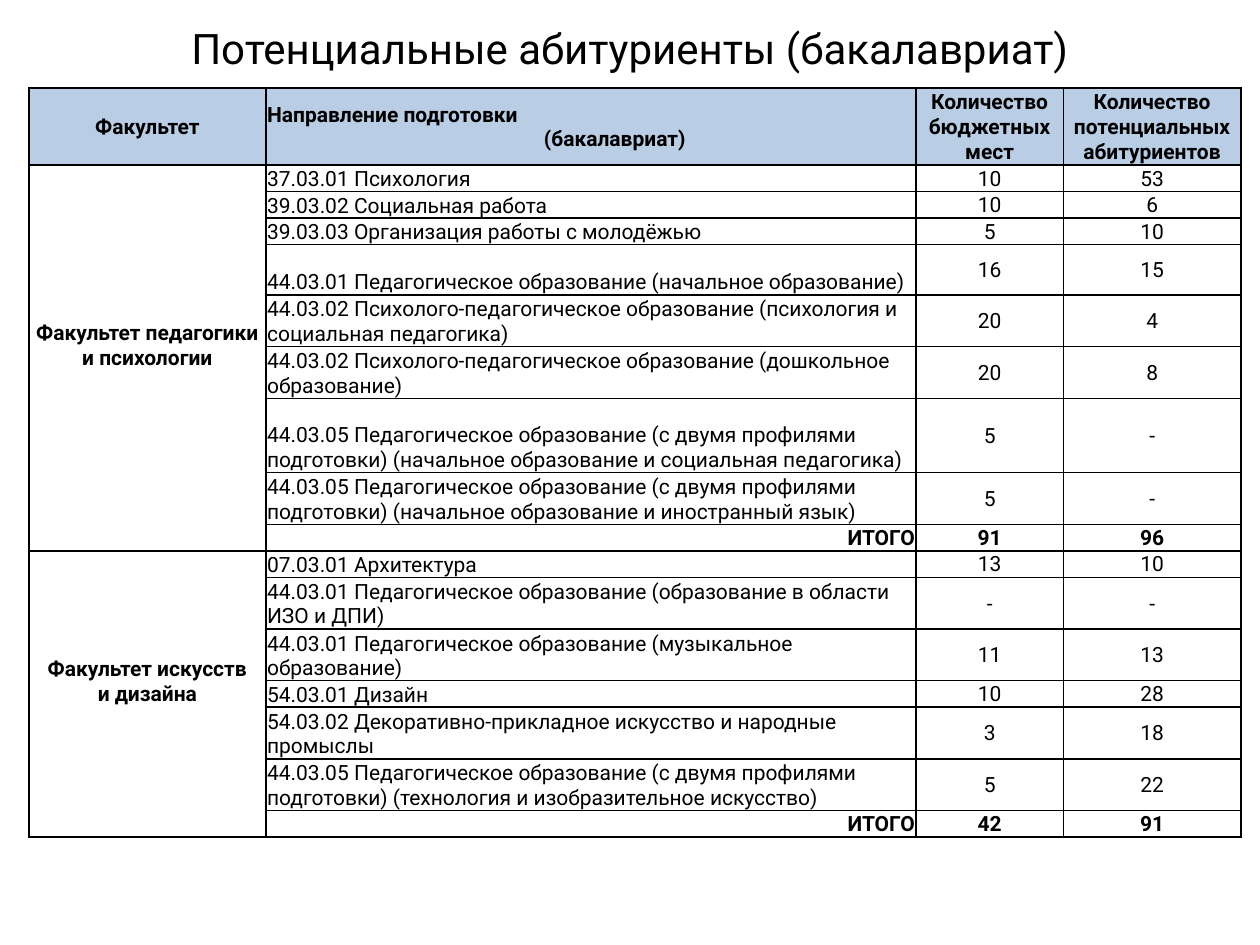
from lxml.etree import SubElement
from pptx import Presentation
from pptx.dml.color import RGBColor
from pptx.enum.text import MSO_ANCHOR, PP_ALIGN
from pptx.oxml.ns import qn
from pptx.util import Inches, Pt

THEME = {
    "font": "Roboto",
    "text": "000000",
    "header": "B9CDE5",
    "border": "000000",
    "title_size": 24,
    "table_size": 12,
    "border_width": 1,
}
TITLE = "Потенциальные абитуриенты (бакалавриат)"
HEADERS = [
    "Факультет",
    "Направление подготовки\n(бакалавриат)",
    "Количество бюджетных мест",
    "Количество потенциальных абитуриентов",
]
TOTAL = "ИТОГО"
FACULTIES = [
    ("Факультет педагогики\nи психологии", [
        ("37.03.01 Психология", "10", "53", 1),
        ("39.03.02 Социальная работа", "10", "6", 1),
        ("39.03.03 Организация работы с молодёжью", "5", "10", 1),
        ("44.03.01 Педагогическое образование (начальное образование)", "16", "15", 2),
        ("44.03.02 Психолого-педагогическое образование (психология и социальная педагогика)", "20", "4", 2),
        ("44.03.02 Психолого-педагогическое образование (дошкольное образование)", "20", "8", 2),
        ("44.03.05 Педагогическое образование (с двумя профилями подготовки) "
         "(начальное образование и социальная педагогика)", "5", "-", 3),
        ("44.03.05 Педагогическое образование (с двумя профилями подготовки) "
         "(начальное образование и иностранный язык)", "5", "-", 2),
        (TOTAL, "91", "96", 1),
    ]),
    ("Факультет искусств\nи дизайна", [
        ("07.03.01 Архитектура", "13", "10", 1),
        ("44.03.01 Педагогическое образование (образование в области ИЗО и ДПИ)", "-", "-", 2),
        ("44.03.01 Педагогическое образование (музыкальное образование)", "11", "13", 2),
        ("54.03.01 Дизайн", "10", "28", 1),
        ("54.03.02 Декоративно-прикладное искусство и народные промыслы", "3", "18", 2),
        ("44.03.05 Педагогическое образование (с двумя профилями подготовки) "
         "(технология и изобразительное искусство)", "5", "22", 2),
        (TOTAL, "42", "91", 1),
    ]),
]
COLUMN_WIDTHS = [1.88, 5.16, 1.17, 1.41]
LINE_HEIGHTS = {1: 0.2, 2: 0.4, 3: 0.59}
HEADER_LINES = 3
FACULTY_BOTTOM = 0.2
SECOND_LINE_INDENT = 0.38


def style_text(text_frame, size, bold=False, alignment=PP_ALIGN.CENTER):
    for paragraph in text_frame.paragraphs:
        paragraph.alignment = alignment
        for run in paragraph.runs:
            run.font.name = THEME["font"]
            run.font.size = Pt(size)
            run.font.bold = bold
            run.font.color.rgb = RGBColor.from_string(THEME["text"])


def style_cell(cell, fill=None):
    properties = cell._tc.get_or_add_tcPr()
    for side in ("a:lnL", "a:lnR", "a:lnT", "a:lnB"):
        line = SubElement(properties, qn(side), w=str(Pt(THEME["border_width"])))
        solid = SubElement(line, qn("a:solidFill"))
        SubElement(solid, qn("a:srgbClr"), val=THEME["border"])
    if fill:
        cell.fill.solid()
        cell.fill.fore_color.rgb = RGBColor.from_string(fill)
    else:
        cell.fill.background()
    cell.margin_left = cell.margin_right = cell.margin_top = Inches(0.01)
    cell.margin_bottom = 0


def write_cell(cell, text, bold=False, alignment=PP_ALIGN.CENTER, anchor=MSO_ANCHOR.MIDDLE):
    cell.text_frame.text = text
    cell.vertical_anchor = anchor
    style_text(cell.text_frame, THEME["table_size"], bold, alignment)


def add_title(slide):
    title = slide.shapes.add_textbox(0, 0, Inches(10), Inches(0.76))
    title.text_frame.word_wrap = True
    title.text_frame.vertical_anchor = MSO_ANCHOR.MIDDLE
    title.text_frame.text = TITLE
    style_text(title.text_frame, THEME["title_size"])


def add_admissions_table(slide):
    line_counts = [HEADER_LINES] + [row[-1] for _, rows in FACULTIES for row in rows]
    heights = [LINE_HEIGHTS[count] for count in line_counts]
    table = slide.shapes.add_table(
        len(heights), len(COLUMN_WIDTHS), Inches(0.23), Inches(0.7),
        Inches(sum(COLUMN_WIDTHS)), Inches(sum(heights)),
    ).table
    table.first_row = table.horz_banding = False
    for column, width in zip(table.columns, COLUMN_WIDTHS):
        column.width = Inches(width)
    for index, (row, height) in enumerate(zip(table.rows, heights)):
        row.height = Inches(height)
        for cell in row.cells:
            style_cell(cell, THEME["header"] if index == 0 else None)

    for column, header in enumerate(HEADERS):
        write_cell(table.cell(0, column), header, bold=True)
    first, second = table.cell(0, 1).text_frame.paragraphs
    first.alignment = PP_ALIGN.LEFT
    second._p.get_or_add_pPr().set("marL", str(Inches(SECOND_LINE_INDENT)))

    start = 1
    for faculty, rows in FACULTIES:
        faculty_cell = table.cell(start, 0)
        faculty_cell.merge(table.cell(start + len(rows) - 1, 0))
        write_cell(faculty_cell, faculty, bold=True)
        faculty_cell.margin_bottom = Inches(FACULTY_BOTTOM)
        for index, (programme, places, applicants, _) in enumerate(rows, start):
            is_total = programme == TOTAL
            alignment = PP_ALIGN.RIGHT if is_total else PP_ALIGN.LEFT
            write_cell(table.cell(index, 1), programme, is_total, alignment, MSO_ANCHOR.BOTTOM)
            for column, count in enumerate((places, applicants), 2):
                write_cell(table.cell(index, column), count, is_total)
        start += len(rows)


def main():
    presentation = Presentation()
    presentation.slide_width = Inches(10)
    presentation.slide_height = Inches(7.5)
    slide = presentation.slides.add_slide(presentation.slide_layouts[6])
    add_title(slide)
    add_admissions_table(slide)
    presentation.save("out.pptx")


if __name__ == "__main__":
    main()
